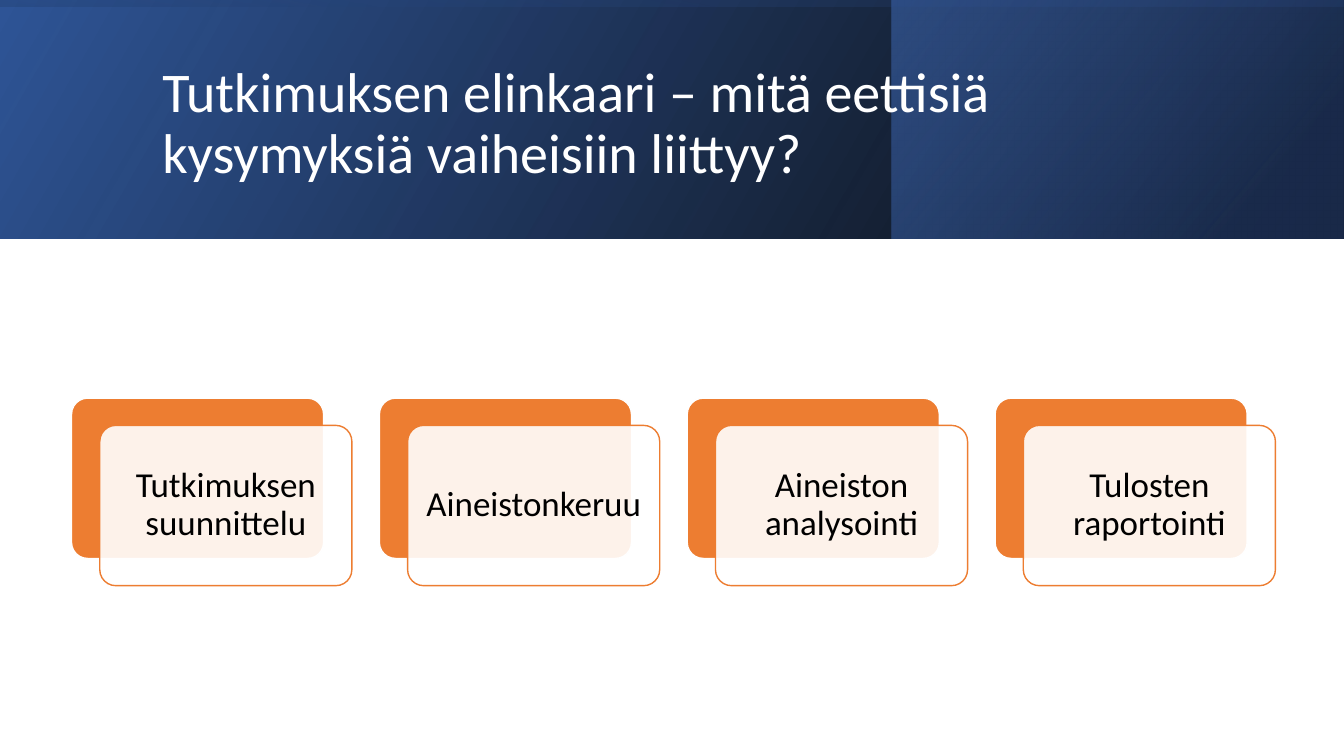
from lxml.etree import SubElement
from pptx import Presentation
from pptx.dml.color import RGBColor
from pptx.enum.shapes import MSO_SHAPE as SHAPE
from pptx.enum.text import MSO_ANCHOR as ANCHOR, MSO_AUTO_SIZE as FIT, PP_ALIGN as ALIGN
from pptx.oxml import parse_xml
from pptx.oxml.ns import nsdecls, qn
from pptx.util import Inches, Pt

WIDTH, HEIGHT, BAND = 13.33, 7.5, 2.37
STAGES = ["Tutkimuksen suunnittelu", "Aineistonkeruu",
          "Aineiston analysointi", "Tulosten raportointi"]


def color(hex_string):
    """Turn a hex string into a colour."""
    return RGBColor.from_string(hex_string)


class Deck:
    """Hold the style and the current slide."""

    font = "Calibri"
    accent = "ED7D31"
    white = "FFFFFF"
    black = "000000"

    def __init__(self):
        """Open a presentation with one title slide."""
        self.prs = Presentation()
        self.prs.slide_width = Inches(WIDTH)
        self.prs.slide_height = Inches(HEIGHT)
        self.slide = self.prs.slides.add_slide(self.prs.slide_layouts[5])

    def shape(self, kind, x, y, w, h):
        """Add a preset shape without a shadow."""
        sp = self.slide.shapes.add_shape(kind, Inches(x), Inches(y), Inches(w), Inches(h))
        sp.shadow.inherit = False
        return sp

    def band(self, x, y, w, h, stops, angle, rotation=0):
        """Add a mirrored rectangle with a translucent gradient."""
        sp = self.shape(SHAPE.RECTANGLE, x, y, w, h)
        sp.rotation = rotation
        sp.line.fill.background()
        spPr = sp._element.spPr
        spPr.find(qn("a:xfrm")).set("flipH", "1")
        marks = "".join(
            f'<a:gs pos="{pos * 1000}"><a:srgbClr val="{value}">'
            f'<a:alpha val="{alpha * 1000}"/></a:srgbClr></a:gs>'
            for pos, value, alpha in stops)
        spPr.find(qn("a:prstGeom")).addnext(parse_xml(
            f'<a:gradFill {nsdecls("a")} rotWithShape="1"><a:gsLst>{marks}</a:gsLst>'
            f'<a:lin ang="{angle * 60000}" scaled="0"/></a:gradFill>'))

    def text(self, tf, words, size, value, align):
        """Set one paragraph, centred vertically."""
        tf.word_wrap = True
        tf.auto_size = FIT.NONE
        tf.vertical_anchor = ANCHOR.MIDDLE
        p = tf.paragraphs[0]
        p.alignment = align
        p.line_spacing = 0.9
        r = p.add_run()
        r.text = words
        r.font.name = self.font
        r.font.size = Pt(size)
        r.font.color.rgb = color(value)

    def title(self, words, x, y, w, h):
        """Fill the title placeholder and bring it to the front."""
        sp = self.slide.shapes.title
        sp.left, sp.top, sp.width, sp.height = (Inches(n) for n in (x, y, w, h))
        self.text(sp.text_frame, words, 40, self.white, ALIGN.LEFT)
        self.slide.shapes._spTree.append(sp._element)

    def card(self, x, y, fill, line):
        """Add a rounded card."""
        sp = self.shape(SHAPE.ROUNDED_RECTANGLE, x, y, 2.5, 1.59)
        sp.adjustments[0] = 0.1
        sp.fill.solid()
        sp.fill.fore_color.rgb = color(fill)
        sp.line.color.rgb = color(line)
        sp.line.width = Pt(1)
        return sp

    def stage(self, words, x, y):
        """Add a stage: a solid card behind a translucent labelled one."""
        self.card(x, y, self.accent, self.white)
        sp = self.card(x + 0.28, y + 0.27, self.white, self.accent)
        value = sp._element.spPr.find(qn("a:solidFill"))[0]
        SubElement(value, qn("a:alpha")).set("val", "90000")
        tf = sp.text_frame
        tf.margin_left = tf.margin_right = tf.margin_top = tf.margin_bottom = Inches(0.1)
        self.text(tf, words, 25, self.black, ALIGN.CENTER)


def main():
    """Build and save the slide."""
    deck = Deck()
    deck.band(0, 0, WIDTH, BAND, [(0, "000000", 96), (100, "2F5597", 100)], 330)
    deck.band(8.84, 0, 4.48, BAND, [(19, "203864", 68), (100, "4472C4", 48)], 320)
    deck.band((WIDTH - BAND) / 2, (BAND - WIDTH) / 2, BAND, WIDTH,
              [(23, "2F5597", 16), (99, "000000", 45)], 350, rotation=270)
    deck.title("Tutkimuksen elinkaari – mitä eettisiä kysymyksiä vaiheisiin liittyy?",
               1.51, 0.38, 10.63, 1.72)
    pitch = (9.87 - 0.71) / (len(STAGES) - 1)
    for i, words in enumerate(STAGES):
        deck.stage(words, 0.71 + i * pitch, 3.95)
    deck.prs.save("out.pptx")


if __name__ == "__main__":
    main()
